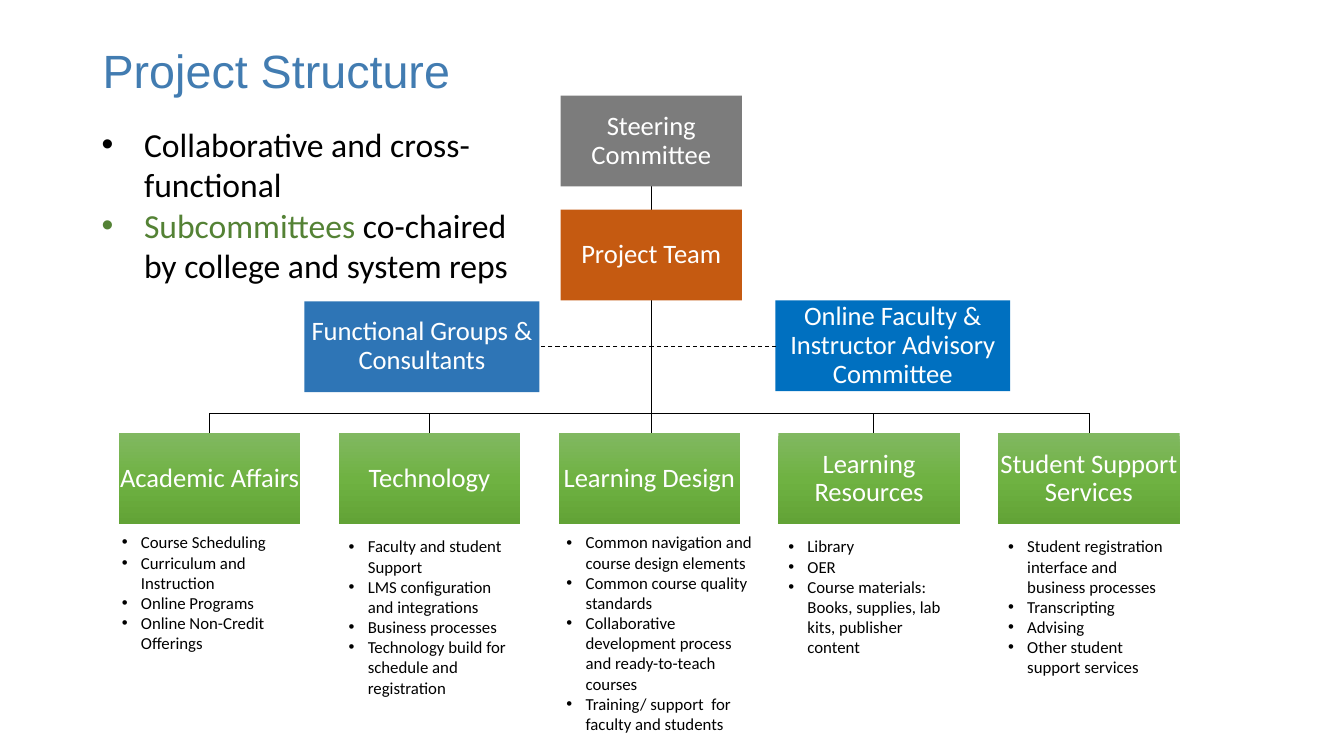
from copy import deepcopy

from lxml.etree import SubElement
from pptx import Presentation
from pptx.dml.color import RGBColor
from pptx.enum.dml import MSO_LINE
from pptx.enum.shapes import MSO_CONNECTOR, MSO_SHAPE
from pptx.enum.text import MSO_ANCHOR, MSO_AUTO_SIZE, PP_ALIGN
from pptx.oxml.ns import qn
from pptx.util import Inches, Pt

BLACK = "000000"
WHITE = "FFFFFF"
GREEN = "548235"
GREEN_STOPS = [(0, "81B861"), (0.5, "6FB242"), (1, "62A336")]

BOX_WIDTH, BOX_HEIGHT = 1.8, 0.9
WIDE_BOX = 2.33
FIRST_LEFT, COLUMN_STEP = 1.18, 2.18
RAIL_TOP, ROW_TOP = 4.1, 4.3
TRUNK = 6.46
DROPS = [2.08, 4.26, 8.66, 10.8]

LEADERSHIP = [
    ("Steering Committee", 5.56, 0.95, BOX_WIDTH, "7C7C7C"),
    ("Project Team", 5.56, 2.08, BOX_WIDTH, "C55A11"),
    ("Functional Groups & Consultants", 3.02, 2.99, WIDE_BOX, "2E75B6"),
    ("Online Faculty & Instructor Advisory Committee", 7.69, 2.98, WIDE_BOX, "0070C0"),
]

SUBCOMMITTEES = [
    ("Academic Affairs", (1.11, 5.23, 1.87, 1.54),
     ["Course Scheduling", "Curriculum and Instruction", "Online Programs",
      "Online Non-Credit Offerings"]),
    ("Technology", (3.36, 5.27, 1.87, 1.94),
     ["Faculty and student Support", "LMS configuration and integrations",
      "Business processes", "Technology build for schedule and registration"]),
    ("Learning Design", (5.52, 5.23, 2.12, 2.12),
     ["Common navigation and course design elements",
      "Common course quality standards",
      "Collaborative development process and ready-to-teach courses",
      "Training/ support  for faculty and students"]),
    ("Learning Resources", (7.72, 5.27, 1.87, 1.31),
     ["Library", "OER",
      "Course materials: Books, supplies, lab kits, publisher content"]),
    ("Student Support Services", (9.9, 5.27, 1.87, 1.51),
     ["Student registration interface and business processes",
      "Transcripting", "Advising", "Other student support services"]),
]


def color(value):
    """Turn a hex string into a colour."""
    return RGBColor.from_string(value)


def style_font(font, size, value, name="Calibri"):
    """Set the face, size and colour of a font."""
    font.name = name
    font.size = Pt(size)
    font.color.rgb = color(value)


def add_text_box(page, left, top, width, height):
    """Add an empty wrapping text box and return its frame."""
    box = page.shapes.add_textbox(Inches(left), Inches(top), Inches(width), Inches(height))
    box.text_frame.word_wrap = True
    return box.text_frame


def add_title(page, text):
    """Add the slide title."""
    frame = add_text_box(page, 0.92, 0, 11.5, 1.45)
    frame.vertical_anchor = MSO_ANCHOR.MIDDLE
    frame.text = text
    para = frame.paragraphs[0]
    para.line_spacing = 0.9
    style_font(para.runs[0].font, 33.3, "427CB1", "Arial")


def set_bullet(para, indent):
    """Give a paragraph a round bullet with a hanging indent."""
    properties = para._p.get_or_add_pPr()
    properties.set("marL", str(Inches(indent)))
    properties.set("indent", str(-Inches(indent)))
    SubElement(properties, qn("a:buFont"), typeface="Arial")
    SubElement(properties, qn("a:buChar"), char="•")


def add_bullets(page, place, items, size, indent):
    """Add a bulleted list whose items are lists of text and colour pairs."""
    frame = add_text_box(page, *place)
    frame.auto_size = MSO_AUTO_SIZE.SHAPE_TO_FIT_TEXT
    for index, item in enumerate(items):
        para = frame.add_paragraph() if index else frame.paragraphs[0]
        set_bullet(para, indent)
        for text, value in item:
            span = para.add_run()
            span.text = text
            style_font(span.font, size, value)


def add_unit(page, text, left, top, width):
    """Add a labelled organisation box and return it."""
    box = page.shapes.add_shape(MSO_SHAPE.RECTANGLE, Inches(left), Inches(top),
                                Inches(width), Inches(BOX_HEIGHT))
    box.shadow.inherit = False
    box.line.fill.background()
    frame = box.text_frame
    frame.word_wrap = True
    frame.vertical_anchor = MSO_ANCHOR.MIDDLE
    frame.margin_left = frame.margin_right = Inches(0.01)
    frame.margin_top = frame.margin_bottom = Inches(0.01)
    frame.text = text
    para = frame.paragraphs[0]
    para.alignment = PP_ALIGN.CENTER
    para.line_spacing = 0.9
    style_font(para.runs[0].font, 19, WHITE)
    return box


def fill_solid(box, value):
    """Fill a box with one colour."""
    box.fill.solid()
    box.fill.fore_color.rgb = color(value)


def fill_gradient(box, stops):
    """Fill a box with a three-stop gradient from top to bottom."""
    box.fill.gradient()
    box.fill.gradient_angle = 270
    stop_list = box.fill._xPr.find(qn("a:gradFill")).find(qn("a:gsLst"))
    stop_list.append(deepcopy(stop_list[-1]))
    for stop, (position, value) in zip(box.fill.gradient_stops, stops):
        stop.position = position
        stop.color.rgb = color(value)


def add_line(page, start, end, width=0.5, dash=None):
    """Add a straight black connector between two points."""
    line = page.shapes.add_connector(MSO_CONNECTOR.STRAIGHT,
                                     *(Inches(value) for value in start + end))
    line.line.color.rgb = color(BLACK)
    line.line.width = Pt(width)
    if dash:
        line.line.dash_style = dash
    SubElement(line._element.spPr, qn("a:effectLst"))


def main():
    """Build the project structure slide."""
    deck = Presentation()
    deck.slide_width, deck.slide_height = Inches(13.33), Inches(7.5)
    page = deck.slides.add_slide(deck.slide_layouts[6])

    add_title(page, "Project Structure")
    add_bullets(page, (0.91, 1.18, 4.25, 2.12), [
        [("Collaborative and cross-functional", BLACK)],
        [("Subcommittees", GREEN), (" co-chaired by college and system reps", BLACK)],
    ], 24, 0.42)

    add_line(page, (TRUNK, 1.85), (TRUNK, ROW_TOP))
    for text, left, top, width, value in LEADERSHIP:
        fill_solid(add_unit(page, text, left, top, width), value)

    for column, (name, place, duties) in enumerate(SUBCOMMITTEES):
        left = FIRST_LEFT + column * COLUMN_STEP
        fill_gradient(add_unit(page, name, left, ROW_TOP, BOX_WIDTH), GREEN_STOPS)
        add_bullets(page, place, [[(duty, BLACK)] for duty in duties], 12, 0.19)

    add_line(page, (7.7, 3.44), (5.36, 3.44), 0.75, MSO_LINE.DASH)
    add_line(page, (DROPS[0], RAIL_TOP), (DROPS[-1], RAIL_TOP))
    for drop in DROPS:
        add_line(page, (drop, RAIL_TOP), (drop, ROW_TOP))

    deck.save("out.pptx")


if __name__ == "__main__":
    main()
